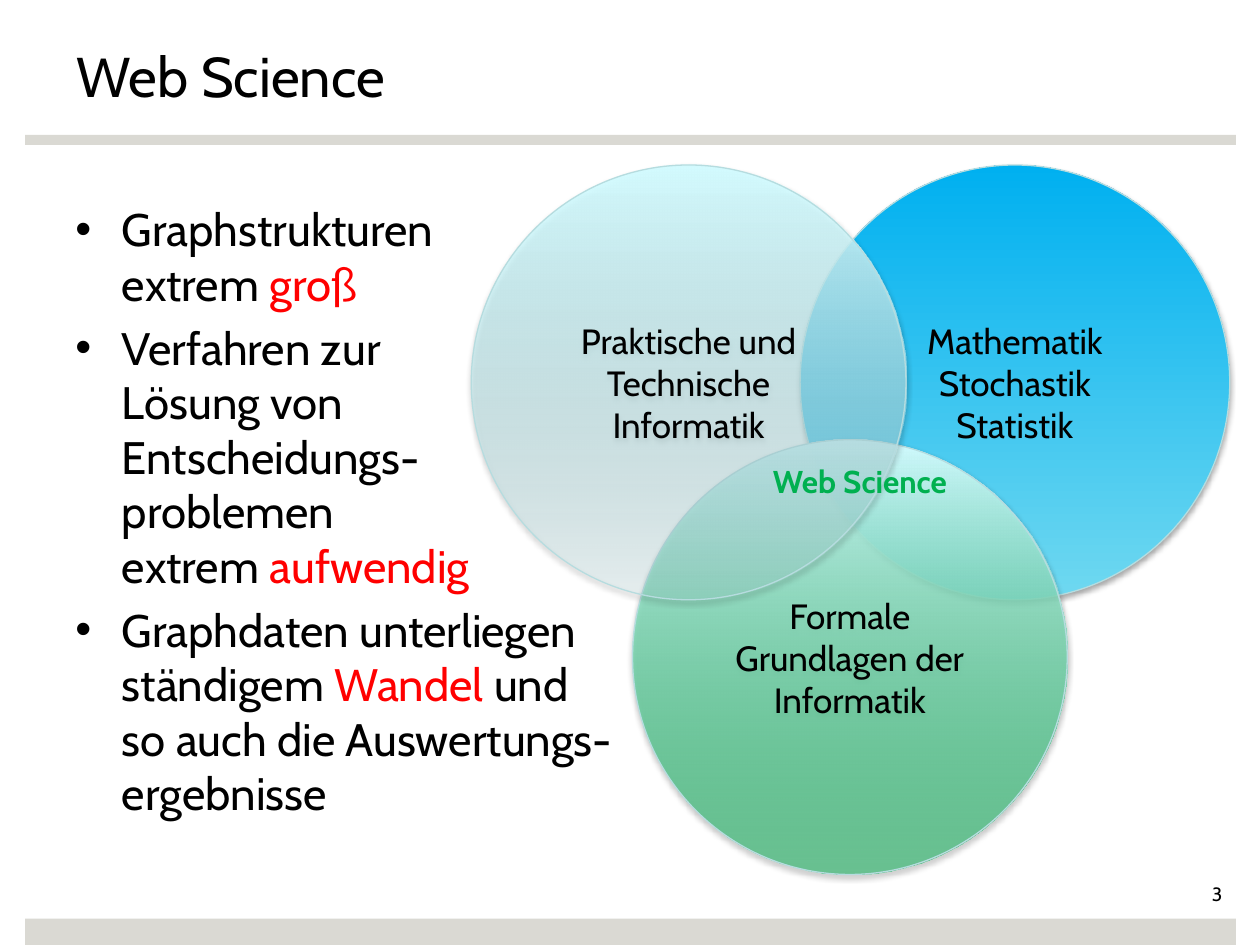
import pptx
import pptx.dml.color
import pptx.enum.shapes
import pptx.enum.text
import pptx.oxml
import pptx.oxml.ns
import pptx.util
from lxml import etree

Inches = pptx.util.Inches
Pt = pptx.util.Pt
RGBColor = pptx.dml.color.RGBColor
ALIGN = pptx.enum.text.PP_ALIGN
ANCHOR = pptx.enum.text.MSO_ANCHOR
SHAPE = pptx.enum.shapes.MSO_SHAPE
qn = pptx.oxml.ns.qn

FONT = "Cabin"
BLACK = RGBColor(0x00, 0x00, 0x00)
RED = RGBColor(0xFF, 0x00, 0x00)
GREEN = RGBColor(0x00, 0xB0, 0x50)
BAR_GREY = RGBColor(0xDA, 0xD9, 0xD3)
OUTLINE = RGBColor(0xB6, 0xDC, 0xDF)
BLUE = RGBColor(0x00, 0xB0, 0xF0)
SKY = RGBColor(0x6F, 0xD8, 0xF0)
PALE = RGBColor(0xD3, 0xFB, 0xFF)
MIST = RGBColor(0xB5, 0xE5, 0xE9)

BULLETS = [
    [("Graphstrukturen\nextrem ", BLACK), ("groß", RED)],
    [("Verfahren zur\nLösung von\nEntscheidungs-\nproblemen\nextrem ", BLACK),
     ("aufwendig", RED)],
    [("Graphdaten unterliegen\nständigem ", BLACK), ("Wandel", RED),
     (" und\nso auch die Auswertungs-\nergebnisse", BLACK)],
]

CIRCLES = [
    (2.61, 0, 3.41, "Mathematik\nStochastik\nStatistik", SKY, BLUE, 100),
    (1.28, 2.18, 3.45, "Formale Grundlagen der\nInformatik", GREEN, PALE, 50),
    (0, 0, 3.45, "Praktische und\nTechnische Informatik", MIST, PALE, 16),
]


def add_text(para, text, size, color=BLACK, bold=False):
    """Add text to a paragraph, with a line break at each newline."""
    for index, line in enumerate(text.split("\n")):
        if index:
            para.add_line_break()
        span = para.add_run()
        span.text = line
        span.font.name = FONT
        span.font.size = Pt(size)
        span.font.bold = bold
        span.font.color.rgb = color


def add_label(page, left, top, width, height, text, size,
              align=ALIGN.LEFT, color=BLACK, bold=False, wrap=True):
    """Place a one-line text box and return its frame."""
    box = page.shapes.add_textbox(Inches(left), Inches(top), Inches(width), Inches(height))
    frame = box.text_frame
    frame.word_wrap = wrap
    para = frame.paragraphs[0]
    para.alignment = align
    add_text(para, text, size, color, bold)
    return frame


def add_bar(page, left, top, width, height):
    """Draw a plain grey bar."""
    bar = page.shapes.add_shape(
        SHAPE.RECTANGLE, Inches(left), Inches(top), Inches(width), Inches(height))
    bar.shadow.inherit = False
    bar.fill.solid()
    bar.fill.fore_color.rgb = BAR_GREY
    bar.line.fill.background()


def add_frame(page, left, width):
    """Draw the bars, the title and the page number."""
    add_bar(page, left, 1.07, width, 0.08)
    add_bar(page, left, 7.29, width, 0.21)
    add_label(page, left + 0.31, 0.28, 9, 0.55, "Web Science", 32)
    number = add_label(page, left + width - 1.11, 7, 1.1, 0.22, "3", 11, ALIGN.RIGHT)
    number.margin_left = number.margin_top = number.margin_bottom = 0


def add_bullets(page, left, top, width, height):
    """Place the bulleted list."""
    box = page.shapes.add_textbox(Inches(left), Inches(top), Inches(width), Inches(height))
    frame = box.text_frame
    frame.word_wrap = True
    for index, pieces in enumerate(BULLETS):
        para = frame.add_paragraph() if index else frame.paragraphs[0]
        properties = para._p.get_or_add_pPr()
        properties.set("marL", str(Inches(0.37)))
        properties.set("indent", str(-Inches(0.37)))
        etree.SubElement(properties, qn("a:buFont"), typeface="Arial")
        etree.SubElement(properties, qn("a:buChar"), char="•")
        if index:
            para.space_before = Pt(5.2)
        for text, color in pieces:
            add_text(para, text, 26, color)


def add_drop_shadow(shape):
    """Give a shape a soft shadow straight below it."""
    shape.shadow.inherit = False
    effects = shape._element.spPr.find(qn("a:effectLst"))
    shadow = etree.SubElement(
        effects, qn("a:outerShdw"), blurRad=str(Pt(3.1)), dist=str(Pt(1.8)),
        dir="5400000", rotWithShape="0")
    color = etree.SubElement(shadow, qn("a:srgbClr"), val="000000")
    etree.SubElement(color, qn("a:alpha"), val="35000")


def add_circle(page, left, top, width, height, text, bottom_color, top_color, opacity):
    """Draw one circle with a vertical gradient and a centred caption."""
    circle = page.shapes.add_shape(
        SHAPE.OVAL, Inches(left), Inches(top), Inches(width), Inches(height))
    circle.fill.gradient()
    circle.fill.gradient_angle = 90
    stops = circle.fill.gradient_stops
    for stop, position, color in zip(stops, (0, 1), (bottom_color, top_color)):
        stop.position = position
        stop.color.rgb = color
    if opacity < 100:
        first = circle._element.spPr.find(".//" + qn("a:srgbClr"))
        etree.SubElement(first, qn("a:alpha"), val=str(opacity * 1000))
    circle.line.color.rgb = OUTLINE
    circle.line.width = Pt(0.75)
    add_drop_shadow(circle)
    frame = circle.text_frame
    frame.word_wrap = True
    frame.vertical_anchor = ANCHOR.MIDDLE
    para = frame.paragraphs[0]
    para.alignment = ALIGN.CENTER
    add_text(para, text, 20)


def add_venn(page, left, top):
    """Draw the three overlapping circles and the label of their overlap."""
    for across, down, width, text, bottom_color, top_color, opacity in CIRCLES:
        add_circle(page, left + across, top + down, width, 3.45,
                   text, bottom_color, top_color, opacity)
    add_label(page, left + 2.28, top + 2.31, 1.61, 0.4, "Web Science", 18,
              ALIGN.CENTER, GREEN, True, False)


def main():
    """Build the deck and save it."""
    deck = pptx.Presentation()
    deck.slide_width = Inches(10)
    deck.slide_height = Inches(7.5)
    page = deck.slides.add_slide(deck.slide_layouts[6])
    add_frame(page, 0.2, 9.61)
    add_bullets(page, 0.5, 1.55, 9, 5.2)
    add_venn(page, 3.74, 1.31)
    deck.save("out.pptx")


if __name__ == "__main__":
    main()
